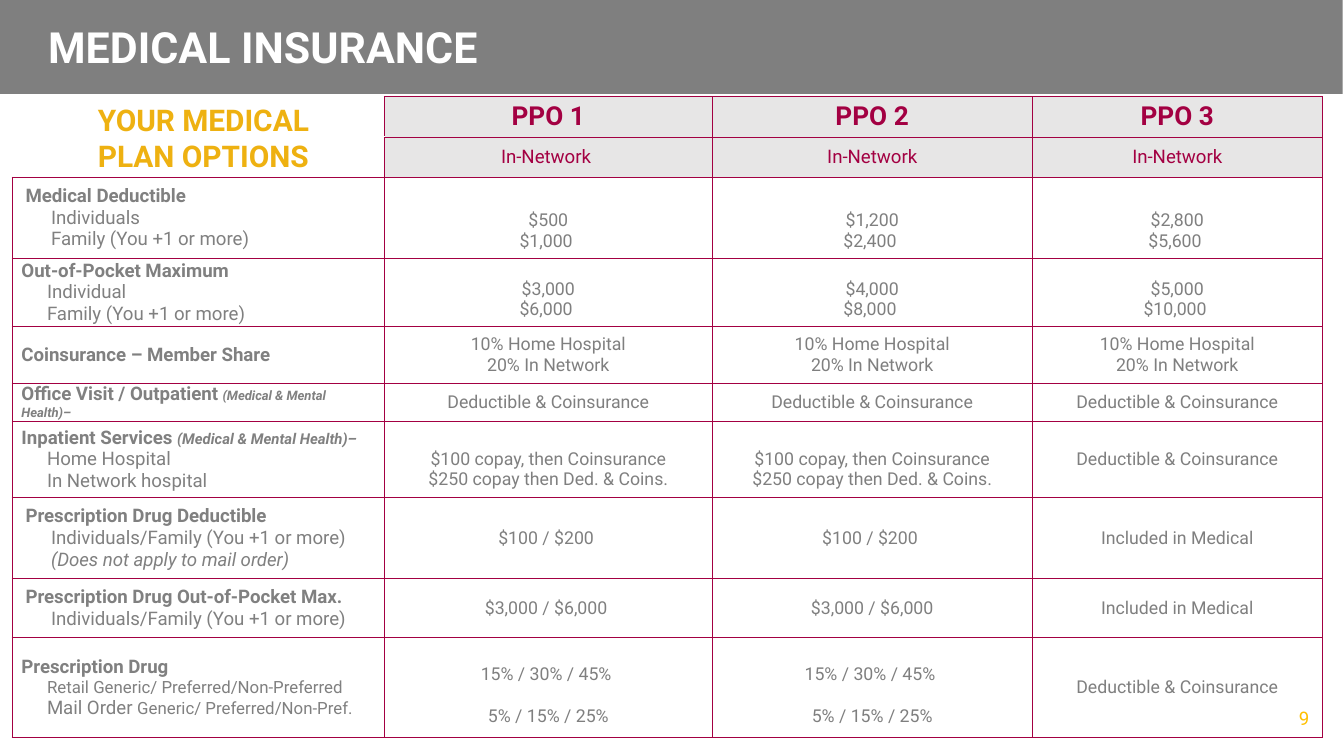
from dataclasses import dataclass

from lxml import etree
from pptx import Presentation
from pptx.dml.color import RGBColor
from pptx.enum.shapes import MSO_SHAPE
from pptx.enum.text import MSO_ANCHOR, MSO_AUTO_SIZE, PP_ALIGN
from pptx.oxml.ns import qn
from pptx.util import Inches, Pt

RECT = MSO_SHAPE.RECTANGLE
MIDDLE, BOTTOM, TOP = MSO_ANCHOR.MIDDLE, MSO_ANCHOR.BOTTOM, MSO_ANCHOR.TOP
LEFT, CENTER, RIGHT = PP_ALIGN.LEFT, PP_ALIGN.CENTER, PP_ALIGN.RIGHT
FIT = MSO_AUTO_SIZE.SHAPE_TO_FIT_TEXT

FONT = "Roboto"
COLORS = {"banner": "7F7F7F", "title": "FFFFFF", "plan": "A30042", "head": "E7E6E6",
          "label": "808080", "value": "7F7F7F", "cell": "FFFFFF",
          "options": "EEB111", "number": "FFC000"}
DEFAULT = (0.1, 0.05, 0.1, 0.05)
TIGHT = (0.07, 0, 0.07, 0)
FLAT = (0, 0.05, 0, 0.05)
LOWERED = (0.1, 0.2, 0.1, 0.05)
ALL_SIDES = ("lnL", "lnR", "lnT", "lnB")
COLUMNS = [2.77, 2.44, 2.38, 2.16]
HEAD_HEIGHT = 0.3


@dataclass
class Run:
    text: str
    size: float = 10
    bold: bool = False
    italic: bool = False


@dataclass
class Values:
    lines: list[str]
    anchor: MSO_ANCHOR = MIDDLE
    inset: tuple = DEFAULT
    gap: float = 0


@dataclass
class Benefit:
    height: float
    heading: list[Run]
    details: list[list[Run]]
    values: list[Values]
    inset: tuple = DEFAULT


def rgb(name: str) -> RGBColor:
    return RGBColor.from_string(COLORS[name])


def add_text(tf, runs: list[Run], *, color: str, align=LEFT, indent: float = 0,
             before: float = 0, after: float = 0) -> None:
    p = tf.paragraphs[0] if not tf.text else tf.add_paragraph()
    p.alignment = align
    p.space_before, p.space_after = Pt(before), Pt(after)
    if indent:
        pPr = p._p.get_or_add_pPr()
        pPr.set("marL", "0")
        pPr.set("indent", str(Inches(indent)))
    for run in runs:
        r = p.add_run()
        r.text = run.text
        r.font.name = FONT
        r.font.size = Pt(run.size)
        r.font.bold, r.font.italic = run.bold, run.italic
        r.font.color.rgb = rgb(color)


def add_box(s, left: float, top: float, width: float, height: float, run: Run, *,
            color: str, inset: tuple = DEFAULT, spacing: float = 0, align=LEFT) -> None:
    tf = s.shapes.add_textbox(Inches(left), Inches(top), Inches(width), Inches(height)).text_frame
    tf.word_wrap = True
    if spacing:
        tf.auto_size = FIT
    tf.margin_left, tf.margin_top, tf.margin_right, tf.margin_bottom = map(Inches, inset)
    add_text(tf, [run], color=color, align=align, before=spacing, after=spacing)


def add_borders(cell, sides: tuple) -> None:
    tcPr = cell._tc.get_or_add_tcPr()
    for i, side in enumerate(sides):
        ln = etree.Element(qn(f"a:{side}"), w=str(Pt(0.5)))
        solid = etree.SubElement(ln, qn("a:solidFill"))
        etree.SubElement(solid, qn("a:srgbClr"), val=COLORS["plan"])
        tcPr.insert(i, ln)


def style_cell(cell, fill: str, inset: tuple, anchor=MIDDLE) -> None:
    cell.margin_left, cell.margin_top, cell.margin_right, cell.margin_bottom = map(Inches, inset)
    cell.vertical_anchor = anchor
    cell.fill.solid()
    cell.fill.fore_color.rgb = rgb(fill)
    add_borders(cell, ALL_SIDES)


def add_benefit(table, row: int, benefit: Benefit) -> None:
    cell = table.cell(row, 0)
    style_cell(cell, "cell", benefit.inset)
    add_text(cell.text_frame, benefit.heading, color="label")
    for detail in benefit.details:
        add_text(cell.text_frame, detail, color="label", indent=0.19)
    for col, values in enumerate(benefit.values, 1):
        cell = table.cell(row, col)
        style_cell(cell, "cell", values.inset, values.anchor)
        for i, line in enumerate(values.lines):
            add_text(cell.text_frame, [Run(line, 9.5)], color="value", align=CENTER,
                     before=values.gap if i else 0)


def heading(text: str) -> Run:
    return Run(text, bold=True)


def note(size: float) -> Run:
    return Run("(Medical & Mental Health)–", size, True, True)


def amounts(*pairs: tuple[str, str]) -> list[Values]:
    return [Values([single, family + " "], BOTTOM) for single, family in pairs]


covered = Values(["Deductible & Coinsurance"])
included = Values(["Included in Medical"])
copays = Values(["$100 copay, then Coinsurance", "$250 copay then Ded. & Coins."], inset=LOWERED)
shares = Values(["15% / 30% / 45% ", "5% / 15% / 25%"], TOP, LOWERED, 11)
family = [Run("Family (You +1 or more)")]
both = [Run("Individuals/Family (You +1 or more)")]

BENEFITS = [
    Benefit(0.6, [heading("Medical Deductible")], [[Run("Individuals")], family],
            amounts(("$500", "$1,000"), ("$1,200", "$2,400"), ("$2,800", "$5,600"))),
    Benefit(0.51, [heading("Out-of-Pocket Maximum")], [[Run("Individual")], family],
            amounts(("$3,000", "$6,000"), ("$4,000", "$8,000"), ("$5,000", "$10,000")), TIGHT),
    Benefit(0.42, [heading("Coinsurance – Member Share")], [],
            [Values(["10% Home Hospital", "20% In Network"])] * 3, TIGHT),
    Benefit(0.28, [heading("Office Visit / Outpatient "), note(7)], [], [covered] * 3, TIGHT),
    Benefit(0.57, [heading("Inpatient Services "), note(8)],
            [[Run("Home Hospital")], [Run("In Network hospital")]],
            [copays, copays, covered], TIGHT),
    Benefit(0.6, [heading("Prescription Drug Deductible")],
            [both, [Run("(Does not apply to mail order)", italic=True)]],
            [Values(["$100 / $200 "])] * 2 + [included]),
    Benefit(0.44, [heading("Prescription Drug Out-of-Pocket Max.")], [both],
            [Values(["$3,000 / $6,000 "]), Values(["$3,000 / $6,000"]), included]),
    Benefit(0.74, [heading("Prescription Drug")],
            [[Run("Retail Generic/ Preferred/Non-Preferred", 9)],
             [Run("Mail Order "), Run("Generic/ Preferred/Non-Pref.", 9)]],
            [shares, shares, covered], TIGHT),
]


def add_plan_table(s) -> None:
    heights = [HEAD_HEIGHT] * 2 + [b.height for b in BENEFITS]
    table = s.shapes.add_table(len(heights), len(COLUMNS), Inches(0.09), Inches(0.72),
                               Inches(sum(COLUMNS)), Inches(sum(heights))).table
    table.first_row = table.horz_banding = False
    for column, width in zip(table.columns, COLUMNS):
        column.width = Inches(width)
    for row, height in zip(table.rows, heights):
        row.height = Inches(height)
    for row, sides in enumerate([("lnR",), ("lnR", "lnB")]):
        blank = table.cell(row, 0)
        blank.fill.background()
        blank.text_frame.paragraphs[0].font.size = Pt(10)
        add_borders(blank, sides)
    for col in range(1, len(COLUMNS)):
        network = "In-Network " if col == 1 else "In-Network"
        heads = [(Run(f"PPO {col}", 14, True), TIGHT), (Run(network), FLAT)]
        for row, (run, inset) in enumerate(heads):
            cell = table.cell(row, col)
            style_cell(cell, "head", inset)
            add_text(cell.text_frame, [run], color="plan", align=CENTER)
    for row, benefit in enumerate(BENEFITS, 2):
        add_benefit(table, row, benefit)


def main() -> None:
    prs = Presentation()
    prs.slide_width = Inches(10)
    prs.slide_height = prs.slide_width * 9 // 16
    s = prs.slides.add_slide(prs.slide_layouts[6])
    banner = s.shapes.add_shape(RECT, Inches(-0.01), Inches(0), Inches(10), Inches(0.7))
    banner.shadow.inherit = False
    banner.fill.solid()
    banner.fill.fore_color.rgb = rgb("banner")
    banner.line.fill.background()
    roomy = (0.1, 0.15, 0.1, 0.15)
    add_box(s, 0.26, 0, 5.98, 0.69, Run("MEDICAL INSURANCE", 23, True),
            color="title", inset=roomy, spacing=6)
    add_plan_table(s)
    add_box(s, 7.51, 5.21, 2.33, 0.3, Run("9"), color="number", align=RIGHT)
    add_box(s, 0.63, 0.61, 2.25, 0.84, Run("YOUR MEDICAL PLAN OPTIONS", 16, True),
            color="options", inset=roomy, spacing=6)
    prs.save("out.pptx")


if __name__ == "__main__":
    main()
